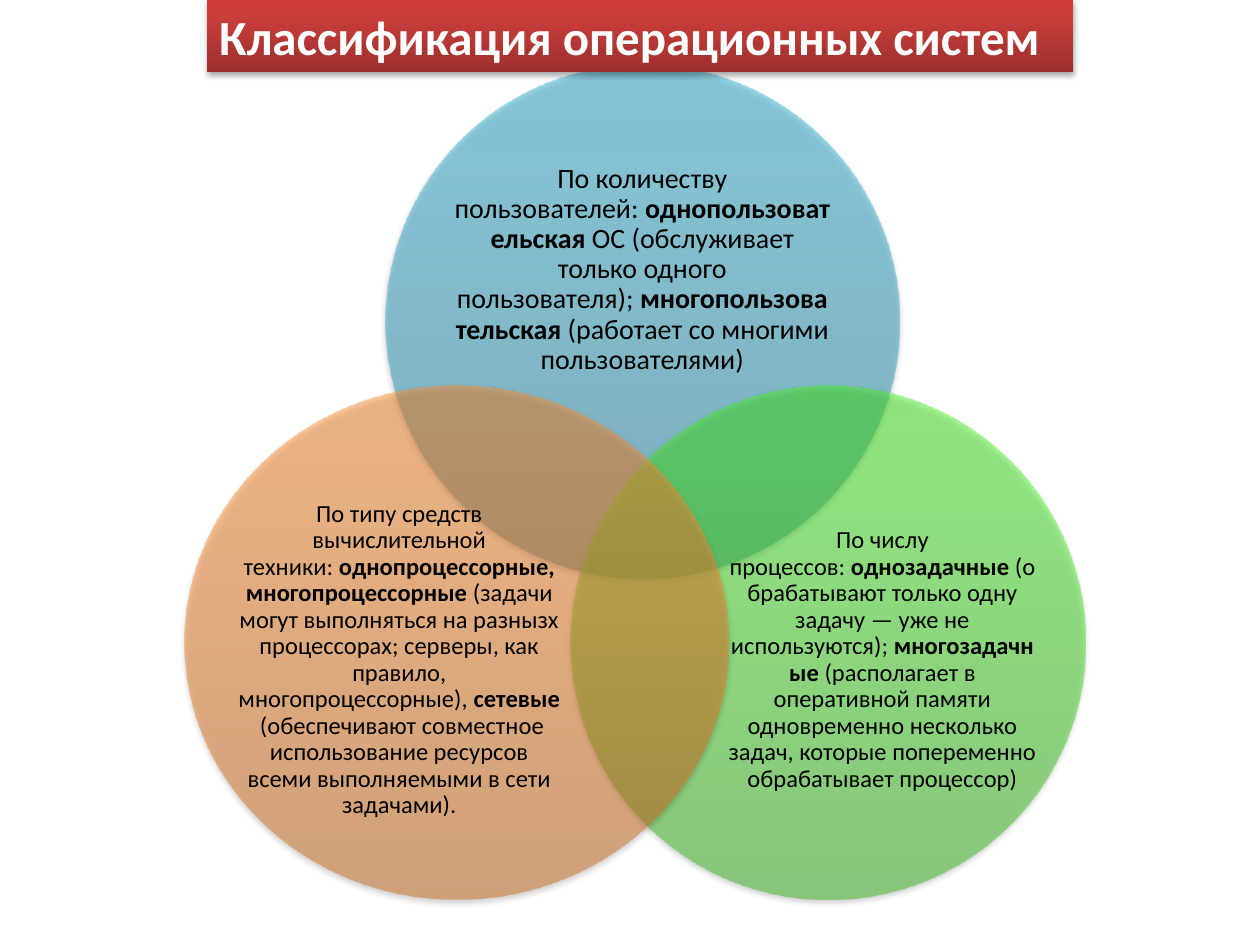
from dataclasses import dataclass

from lxml.etree import SubElement
from pptx import Presentation
from pptx.dml.color import RGBColor
from pptx.enum.shapes import MSO_SHAPE
from pptx.enum.text import MSO_ANCHOR, PP_ALIGN
from pptx.oxml.ns import qn
from pptx.shapes.autoshape import Shape
from pptx.slide import Slide
from pptx.text.text import TextFrame
from pptx.util import Cm, Pt

BLACK = RGBColor(0x00, 0x00, 0x00)
WHITE = RGBColor(0xFF, 0xFF, 0xFF)
BLUES = (RGBColor(0x2A, 0x88, 0xA2), RGBColor(0x37, 0xB1, 0xD2), RGBColor(0x34, 0xB4, 0xD6))
GREENS = (RGBColor(0x3C, 0xB9, 0x23), RGBColor(0x4E, 0xF0, 0x2E), RGBColor(0x4C, 0xF5, 0x2A))
ORANGES = (RGBColor(0xCC, 0x6E, 0x20), RGBColor(0xFF, 0x90, 0x34), RGBColor(0xFF, 0x91, 0x36))
REDS = (RGBColor(0x9C, 0x2F, 0x2D), RGBColor(0xCB, 0x3E, 0x3A), RGBColor(0xCE, 0x3B, 0x37))

FONT = "Calibri"
NO_BREAK_SPACE = chr(160)
STOP_PERCENTS = (0, 80, 100)
CIRCLE_OPACITY = 50
CIRCLE_HEIGHT = 10.37

Colours = tuple[RGBColor, RGBColor, RGBColor]
Bounds = tuple[float, float, float, float]


@dataclass(frozen=True)
class Circle:
    """One set of the diagram; every second span of its text is bold."""

    bounds: Bounds
    colours: Colours
    text_bounds: Bounds
    text_size: int
    spans: tuple[str, ...]


CIRCLES = (
    Circle(
        (7.77, 1.3, CIRCLE_HEIGHT, CIRCLE_HEIGHT), BLUES, (9.15, 3.1, 7.6, 4.67), 16,
        (
            "По количеству пользователей:",
            "однопользовательская",
            "ОС (обслуживает только одного пользователя);",
            "многопользовательская",
            "(работает со многими пользователями)",
        ),
    ),
    Circle(
        (11.51, 7.77, CIRCLE_HEIGHT, CIRCLE_HEIGHT), GREENS, (14.68, 10.46, 6.22, 5.7), 14,
        (
            "По числу процессов:",
            "однозадачные",
            "(обрабатывают только одну задачу — уже не используются);",
            "многозадачные",
            "(располагает в оперативной памяти одновременно несколько задач, "
            "которые попеременно обрабатывает процессор)",
        ),
    ),
    Circle(
        (3.72, 7.77, 10.97, CIRCLE_HEIGHT), ORANGES, (4.76, 10.46, 6.58, 5.7), 14,
        (
            "По типу средств вычислительной техники:",
            "однопроцессорные, многопроцессорные",
            "(задачи могут выполняться на разнызх процессорах; серверы, "
            "как правило, многопроцессорные),",
            "сетевые",
            "(обеспечивают совместное использование ресурсов "
            "всеми выполняемыми в сети задачами).",
        ),
    ),
)


def add_colour(parent, colour: RGBColor, opacity: int) -> None:
    element = SubElement(parent, qn("a:srgbClr"), val=str(colour))
    if opacity < 100:
        SubElement(element, qn("a:alpha"), val=str(opacity * 1000))


def set_gradient(shape: Shape, colours: Colours, opacity: int) -> None:
    """Fill from the first colour at the bottom to the last at the top."""
    shape.fill.gradient()
    gradient = shape._element.spPr.find(qn("a:gradFill"))
    for child in list(gradient):
        gradient.remove(child)
    stops = SubElement(gradient, qn("a:gsLst"))
    for percent, colour in zip(STOP_PERCENTS, colours):
        stop = SubElement(stops, qn("a:gs"), pos=str(percent * 1000))
        add_colour(stop, colour, opacity)
    SubElement(gradient, qn("a:lin"), ang=str(270 * 60000), scaled="0")


def set_shadow(shape: Shape) -> None:
    shape.shadow.inherit = False
    effects = shape._element.spPr.find(qn("a:effectLst"))
    shadow = SubElement(
        effects, qn("a:outerShdw"), blurRad=str(Pt(3.1)), dist=str(Pt(1.8)),
        dir=str(90 * 60000), rotWithShape="0",
    )
    add_colour(shadow, BLACK, 35)


def add_glossy_shape(
    page: Slide, kind: MSO_SHAPE, bounds: Bounds, colours: Colours, opacity: int = 100
) -> Shape:
    shape = page.shapes.add_shape(kind, *map(Cm, bounds))
    shape.line.fill.background()
    set_gradient(shape, colours, opacity)
    set_shadow(shape)
    return shape


def glue_spans(spans: tuple[str, ...]) -> list[str]:
    """Tie the regular spans to their bold neighbours, and dashes to the word before."""
    last = len(spans) - 1
    glued = []
    for index, text in enumerate(spans):
        if index % 2 == 0:
            before = NO_BREAK_SPACE if index > 0 else ""
            after = NO_BREAK_SPACE if index < last else ""
            text = before + text.replace(" —", NO_BREAK_SPACE + "—") + after
        glued.append(text)
    return glued


def write_spans(
    frame: TextFrame, spans: tuple[str, ...], size: int, colour: RGBColor,
    alignment: PP_ALIGN, first_bold: bool = False,
) -> None:
    """Write one paragraph whose spans alternate in weight."""
    frame.word_wrap = True
    frame.vertical_anchor = MSO_ANCHOR.MIDDLE
    para = frame.paragraphs[0]
    para.alignment = alignment
    for index, text in enumerate(glue_spans(spans)):
        span = para.add_run()
        span.text = text
        span.font.color.rgb = colour
        font_format = {"name": FONT, "size": Pt(size), "bold": (index % 2 == 1) != first_bold}
        for name, value in font_format.items():
            setattr(span.font, name, value)


def add_circle(page: Slide, circle: Circle) -> None:
    add_glossy_shape(page, MSO_SHAPE.OVAL, circle.bounds, circle.colours, CIRCLE_OPACITY)
    box = page.shapes.add_textbox(*map(Cm, circle.text_bounds))
    frame = box.text_frame
    for side in ("left", "top", "right", "bottom"):
        setattr(frame, f"margin_{side}", 0)
    write_spans(frame, circle.spans, circle.text_size, BLACK, PP_ALIGN.CENTER)
    frame.paragraphs[0].line_spacing = 0.9


def main() -> None:
    deck = Presentation()
    deck.slide_width, deck.slide_height = Cm(25.4), Cm(19.05)
    page = deck.slides.add_slide(deck.slide_layouts[6])
    for circle in CIRCLES:
        add_circle(page, circle)
    title = add_glossy_shape(page, MSO_SHAPE.RECTANGLE, (4.17, 0, 17.46, 1.45), REDS)
    write_spans(
        title.text_frame, ("Классификация операционных систем",), 28, WHITE,
        PP_ALIGN.LEFT, first_bold=True,
    )
    deck.save("out.pptx")


if __name__ == "__main__":
    main()
